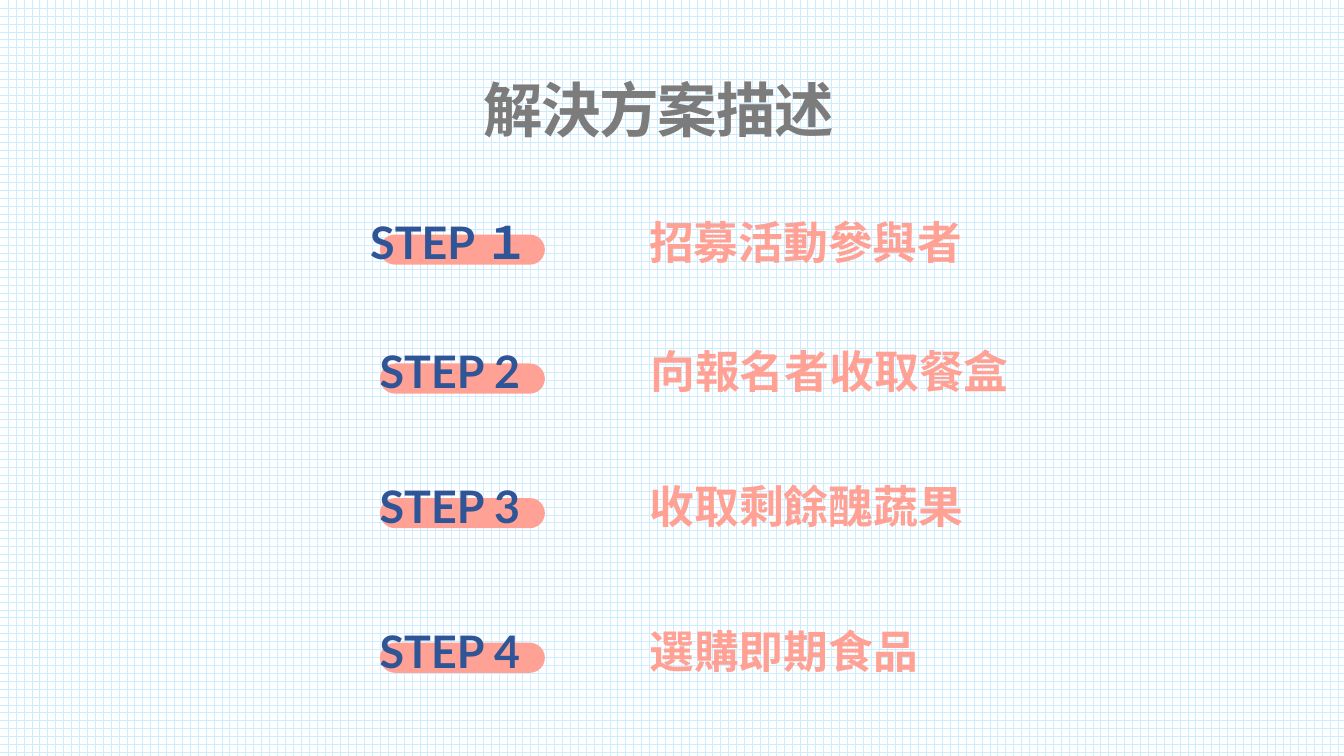
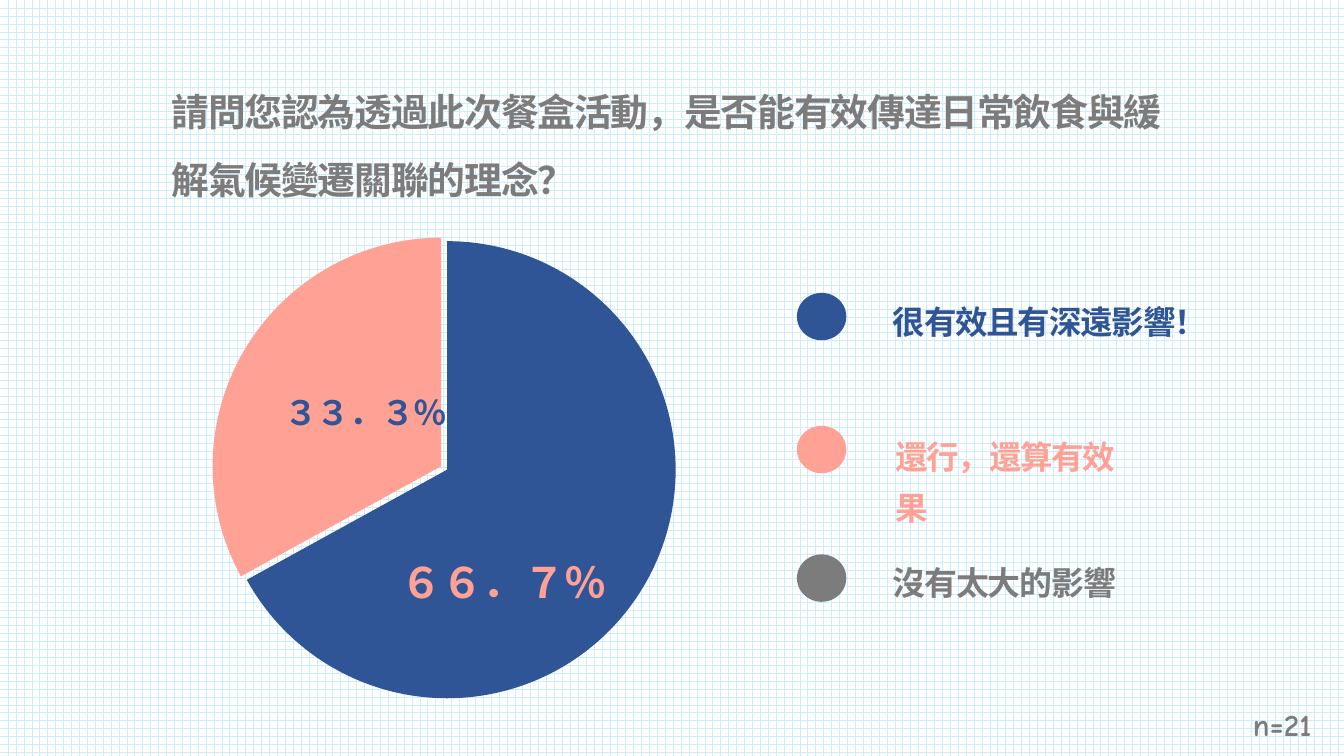
from lxml import etree
from pptx import Presentation
from pptx.chart.data import CategoryChartData
from pptx.dml.color import RGBColor
from pptx.enum import chart as charts, dml, shapes, text
from pptx.oxml import parse_xml
from pptx.oxml.ns import nsdecls, qn
from pptx.util import Cm, Pt

# Content: places and sizes in centimetres
BLUE, PINK, GREY, PAPER, GRID = "2F5597", "FFA295", "7C7C7C", "FFFFFF", "CCECFF"

TITLE = "解決方案描述"
STEPS = [  # step, top, label, label left, label width
    ("STEP １", 10.72, "招募活動參與者", 31.72, 17.78),
    ("STEP 2", 17.22, "向報名者收取餐盒", 32.33, 18.95),
    ("STEP 3", 24, "收取剩餘醜蔬果", 32.03, 17.2),
    ("STEP 4", 31.29, "選購即期食品", 31.72, 15.54),
]

QUESTION = "請問您認為透過此次餐盒活動，是否能有效傳達日常飲食與緩解氣候變遷關聯的理念？"
SAMPLE = "n=21"
SLICES = [("1", 67, BLUE), ("2", 33, PINK), ("3", 0, "61D836")]
SHARES = [  # words, left, top, size, colour
    ("６６．７％", 19.51, 26.11, 60, PINK),
    ("３３．３％", 13.64, 18.03, 48, BLUE),
]
LEGEND = [  # words, colour, dot top, text box, size, line spacing
    ("很有效且有深遠影響！", BLUE, 14.76, (44.3, 13.92, 16.28, 5.38), 46.5, 1.3),
    ("還行，還算有效果", PINK, 21.46, (44.42, 20.73, 13.94, 5.38), 46.5, 1.3),
    ("沒有太大的影響", GREY, 27.94, (44.3, 26.67, 16.28, 5.38), 47, 1.5),
]


# Shared tools
def colour(value):
    return RGBColor.from_string(value)


def add_page(deck):
    page = deck.slides.add_slide(deck.slide_layouts[6])
    fill = page.background.fill
    fill.patterned()
    fill.pattern = dml.MSO_PATTERN.DOTTED_GRID
    fill.fore_color.rgb = colour(GRID)
    fill.back_color.rgb = colour(PAPER)
    return page


def add_text(holder, words, area, *, size, ink, font="Lato", centred=False,
             inset=None, spacing=None, tracking=None, grow=False, middle=False):
    box = holder.add_textbox(*map(Cm, area))
    frame = box.text_frame
    frame.word_wrap = True
    if grow:
        frame.auto_size = text.MSO_AUTO_SIZE.SHAPE_TO_FIT_TEXT
    if middle:
        frame.vertical_anchor = text.MSO_ANCHOR.MIDDLE
    if inset is not None:
        frame.margin_left = frame.margin_right = Cm(inset)
        frame.margin_top = frame.margin_bottom = Cm(inset)
    para = frame.paragraphs[0]
    para.alignment = text.PP_ALIGN.CENTER if centred else text.PP_ALIGN.LEFT
    if spacing:
        para.line_spacing = spacing
    span = para.add_run()
    span.text = words
    span.font.size, span.font.bold, span.font.name = Pt(size), True, font
    span.font.color.rgb = colour(ink)
    # East Asian typeface and letter spacing
    props = span.font._element
    etree.SubElement(props, qn("a:ea")).set("typeface", font)
    if tracking is not None:
        props.set("spc", str(round(tracking * 100)))


def add_heading(holder, words, area, *, size, ink, spacing=1.5, centred=False):
    add_text(holder, words, area, size=size, ink=ink, spacing=spacing,
             centred=centred, inset=0.69, tracking=-1.7)


def add_shape(holder, kind, area, paint):
    shape = holder.add_shape(kind, *map(Cm, area))
    shape.shadow.inherit = False
    shape.fill.solid()
    shape.fill.fore_color.rgb = colour(paint)
    shape.line.fill.background()
    return shape


def add_pie(page, area):
    data = CategoryChartData()
    data.categories = [name for name, _, _ in SLICES]
    data.add_series("Series 1", [value for _, value, _ in SLICES])
    chart = page.shapes.add_chart(charts.XL_CHART_TYPE.PIE, *map(Cm, area), data).chart
    chart.has_legend = chart.has_title = False
    chart.font.size, chart.font.name = Pt(10), "Roboto"
    chart.font.color.rgb = colour("5E5E5E")
    plot = chart.plots[0]
    plot.vary_by_categories = False
    series = plot.series[0]
    for index, (_, _, paint) in enumerate(SLICES):
        look = series.points[index].format
        look.fill.solid()
        look.fill.fore_color.rgb = colour(paint)
        look.line.fill.background()
    # Pull the second slice out a little
    point = series._element.findall(qn("c:dPt"))[1]
    point.find(qn("c:spPr")).addprevious(
        parse_xml(f'<c:explosion {nsdecls("c")} val="3"/>'))
    # Fix the place of the pie inside its frame
    area_node = chart._chartSpace.chart.plotArea
    for old in area_node.findall(qn("c:layout")):
        area_node.remove(old)
    places = {"x": 0.12, "y": 0.02, "w": 0.78, "h": 0.97}
    parts = "".join(f'<c:{key} val="{value}"/>' for key, value in places.items())
    area_node.insert(0, parse_xml(
        f'<c:layout {nsdecls("c")}><c:manualLayout><c:layoutTarget val="inner"/>'
        f'<c:xMode val="edge"/><c:yMode val="edge"/>{parts}</c:manualLayout></c:layout>'))


# Slides
def build_steps(deck):
    page = add_page(deck)
    add_heading(page.shapes, TITLE, (1.63, 3.68, 63.12, 4.24),
                size=85, ink=GREY, spacing=0.8, centred=True)
    for step, top, label, left, width in STEPS:
        bar = add_shape(page.shapes, shapes.MSO_SHAPE.ROUNDED_RECTANGLE,
                        (19.15, top + 1.1, 8.31, 1.52), PINK)
        bar.adjustments[0] = 0.5
        for words, x, w, ink in ((step, 17.88, 9.58, BLUE), (label, left, width, PINK)):
            add_text(page.shapes, words, (x, top, w, 3), size=64, ink=ink,
                     centred=True, grow=True)


def build_survey(deck):
    page = add_page(deck)
    add_heading(page.shapes, QUESTION, (7.95, 2.62, 52.1, 15.54), size=54, ink=GREY)
    add_text(page.shapes, SAMPLE, (60.02, 35.43, 9.19, 2.16), size=44, ink=GREY,
             font="Comic Neue", centred=True, inset=0.15, grow=True, middle=True)
    add_pie(page, (7.39, 11.68, 29.69, 23.75))
    for words, left, top, size, ink in SHARES:
        add_heading(page.shapes, words, (left, top, 13.94, 5.38), size=size, ink=ink)
    legend = page.shapes.add_group_shape().shapes
    for words, ink, top, area, size, spacing in LEGEND:
        add_shape(legend, shapes.MSO_SHAPE.OVAL, (40.16, top, 2.49, 2.39), ink)
        add_heading(legend, words, area, size=size, ink=ink, spacing=spacing)


def main():
    deck = Presentation()
    deck.slide_width, deck.slide_height = Cm(67.73), Cm(38.1)
    build_steps(deck)
    build_survey(deck)
    deck.save("out.pptx")


if __name__ == "__main__":
    main()
